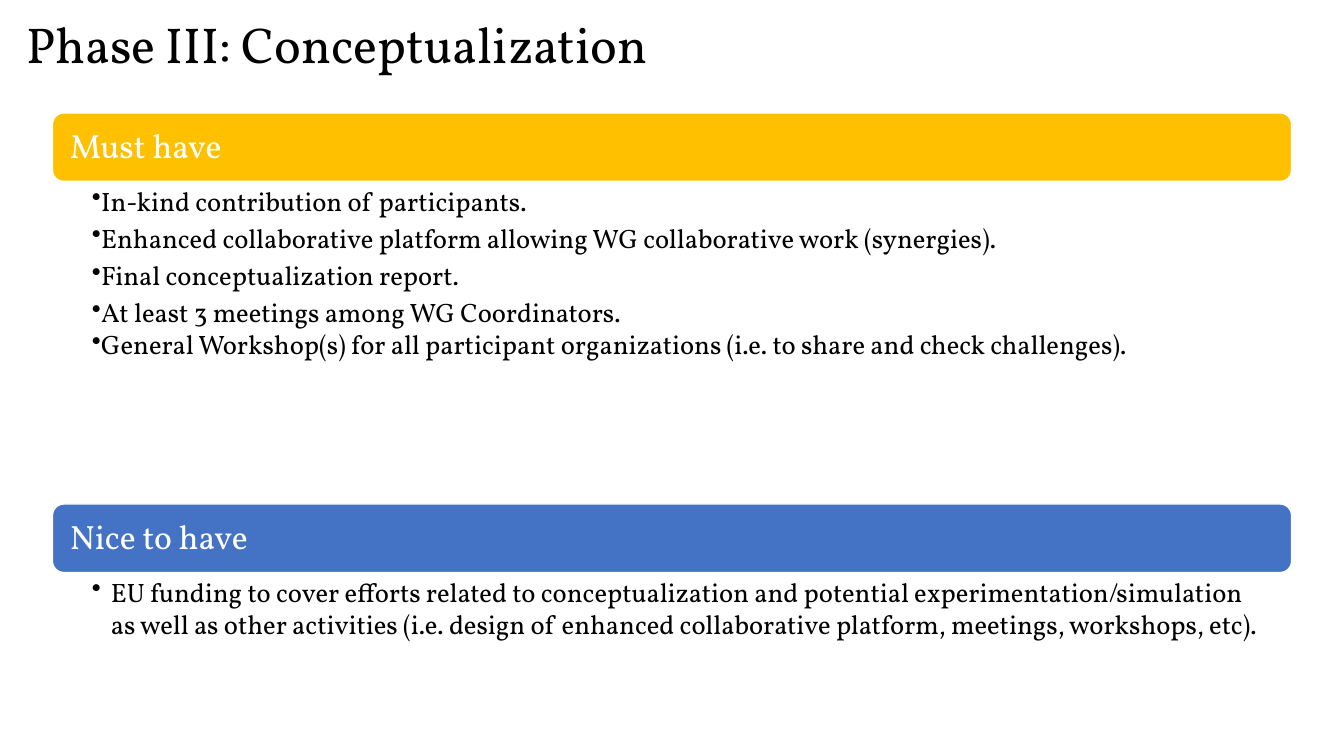
import pptx
import pptx.dml.color
import pptx.enum.shapes
import pptx.enum.text
import pptx.oxml.xmlchemy
import pptx.util
import lxml.etree
from pptx.util import Inches

BLACK = pptx.dml.color.RGBColor(0x00, 0x00, 0x00)
WHITE = pptx.dml.color.RGBColor(0xFF, 0xFF, 0xFF)
AMBER = pptx.dml.color.RGBColor(0xFF, 0xC0, 0x00)
BLUE = pptx.dml.color.RGBColor(0x44, 0x72, 0xC4)
FONT = "Vollkorn"
HEADER_HEIGHT = 0.68

MUST_HAVE = [
    "In-kind contribution of participants.",
    "Enhanced collaborative platform allowing WG collaborative work (synergies).",
    "Final conceptualization report.",
    "At least 3 meetings among WG Coordinators.",
    "General Workshop(s) for all participant organizations (i.e. to share and check challenges).",
]
NICE_TO_HAVE = [
    "EU funding to cover efforts related to conceptualization and potential "
    "experimentation/simulation as well as other activities (i.e. design of enhanced "
    "collaborative platform, meetings, workshops, etc).",
]


def add_span(para, text, size, color):
    span = para.add_run()
    span.text = text
    span.font.name = FONT
    span.font.size = pptx.util.Pt(size)
    span.font.color.rgb = color


def set_margins(frame, left, top, right, bottom):
    frame.margin_left, frame.margin_top = Inches(left), Inches(top)
    frame.margin_right, frame.margin_bottom = Inches(right), Inches(bottom)


def set_bullet(para, indent):
    properties = para._p.get_or_add_pPr()
    properties.set("marL", str(Inches(indent)))
    properties.set("indent", str(-Inches(indent)))
    bullet = lxml.etree.SubElement(properties, pptx.oxml.ns.qn("a:buChar"))
    bullet.set("char", "•")


def add_title(page, left, top, width, height, text):
    box = page.shapes.add_textbox(Inches(left), Inches(top), Inches(width), Inches(height))
    box.text_frame.word_wrap = False
    box.text_frame.auto_size = pptx.enum.text.MSO_AUTO_SIZE.SHAPE_TO_FIT_TEXT
    add_span(box.text_frame.paragraphs[0], text, 36, BLACK)


def add_header(page, left, top, width, height, text, color):
    header = page.shapes.add_shape(
        pptx.enum.shapes.MSO_SHAPE.ROUNDED_RECTANGLE,
        Inches(left), Inches(top), Inches(width), Inches(height))
    header.shadow.inherit = False
    header.fill.solid()
    header.fill.fore_color.rgb = color
    header.line.color.rgb = WHITE
    header.line.width = pptx.util.Pt(1)
    frame = header.text_frame
    frame.word_wrap = True
    frame.vertical_anchor = pptx.enum.text.MSO_ANCHOR.MIDDLE
    set_margins(frame, 0.14, 0.1, 0.14, 0.1)
    para = frame.paragraphs[0]
    para.alignment = pptx.enum.text.PP_ALIGN.LEFT
    para.line_spacing = 0.9
    add_span(para, text, 24, WHITE)


def add_list(page, left, top, width, height, items, indent, spaced):
    box = page.shapes.add_textbox(Inches(left), Inches(top), Inches(width), Inches(height))
    frame = box.text_frame
    frame.word_wrap = True
    set_margins(frame, 0.39, 0.03, 0.19, 0.03)
    for index, item in enumerate(items):
        para = frame.paragraphs[0] if index == 0 else frame.add_paragraph()
        para.level = 1
        para.space_after = pptx.util.Pt(3.8 if index < spaced else 0)
        set_bullet(para, indent)
        add_span(para, item, 19, BLACK)


def add_section(page, left, top, width, height, heading, color, items, indent, spaced):
    add_header(page, left, top, width, HEADER_HEIGHT, heading, color)
    add_list(page, left, top + HEADER_HEIGHT, width, height - HEADER_HEIGHT,
             items, indent, spaced)


def main():
    deck = pptx.Presentation()
    deck.slide_width, deck.slide_height = Inches(13.33), Inches(7.5)
    page = deck.slides.add_slide(deck.slide_layouts[6])
    add_title(page, 0.16, 0.08, 6.5, 0.71, "Phase III: Conceptualization")
    add_section(page, 0.52, 1.12, 12.29, 3.89, "Must have", AMBER, MUST_HAVE, 0, 3)
    add_section(page, 0.52, 5, 12.29, 1.82, "Nice to have", BLUE, NICE_TO_HAVE, 0.19, 1)
    deck.save("out.pptx")


if __name__ == "__main__":
    main()
